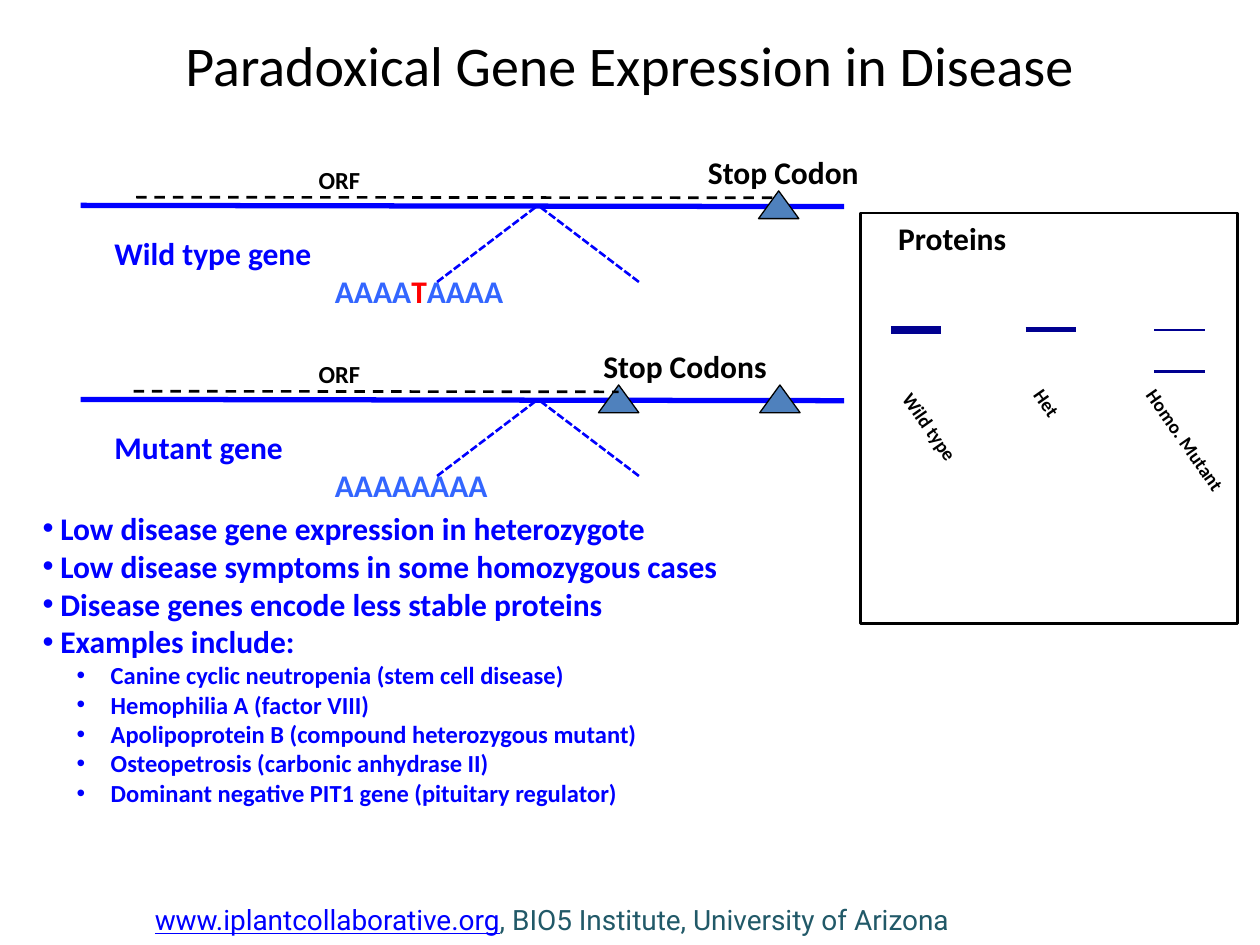
"""Build the slide on paradoxical gene expression on a grid of 100 columns by 75 rows."""
import dataclasses
import typing

import lxml.etree
import pptx
import pptx.dml.color
import pptx.enum.dml
import pptx.enum.shapes
import pptx.enum.text
import pptx.oxml.ns
import pptx.util

COLS, ROWS = 100, 75
BLUE, SKY, NAVY, RED, BLACK = "0000FF", "3366FF", "000090", "FF0000", "000000"
SHORT = pptx.enum.dml.MSO_LINE.SQUARE_DOT
LONG = pptx.enum.dml.MSO_LINE.DASH
MID = pptx.enum.text.MSO_ANCHOR.MIDDLE
SHAPES = pptx.enum.shapes.MSO_SHAPE

deck = pptx.Presentation()
deck.slide_width, deck.slide_height = pptx.util.Inches(10), pptx.util.Inches(7.5)
slide = deck.slides.add_slide(deck.slide_layouts[5])


@dataclasses.dataclass
class Gene:
    """A gene row: its line's row, name, bases, stop label and the columns of its stops."""
    row: float
    name: str
    bases: list[tuple[str, str]]
    label: str
    label_col: float
    stops: list[float]
    frame: tuple[float, float]


@dataclasses.dataclass
class Band:
    """A protein band on the gel."""
    col: float
    row: float
    width: float


@dataclasses.dataclass
class Lane:
    """A slanted lane name on the gel."""
    name: str
    col: float
    row: float
    span: float


GENES = [
    Gene(16.35, "Wild type gene", [("AAAA", SKY), ("T", RED), ("AAAA", SKY)],
         "Stop Codon", 55.2, [60.2], (10.8, 61.8)),
    Gene(31.75, "Mutant gene", [("AAAAAAAA", SKY)],
         "Stop Codons", 46.9, [60.3, 47.5], (10.6, 49.1)),
]
BANDS = [Band(70.7, 26.2, 4.5), Band(81.4, 26.15, 3), Band(91.6, 26.2, 1), Band(91.6, 29.5, 1.5)]
LANES = [Lane("Wild type", 69, 33.8, 11.5), Lane("Het", 79.4, 33.5, 11.5),
         Lane("Homo. Mutant", 88.1, 34, 12.6)]
POINTS = ["Low disease gene expression in heterozygote",
          "Low disease symptoms in some homozygous cases",
          "Disease genes encode less stable proteins",
          "Examples include:"]
CASES = ["Canine cyclic neutropenia (stem cell disease)",
         "Hemophilia A (factor VIII)",
         "Apolipoprotein B (compound heterozygous mutant)",
         "Osteopetrosis (carbonic anhydrase II)",
         "Dominant negative PIT1 gene (pituitary regulator)"]


def across(cols: float) -> int:
    """Turn columns into a length."""
    return round(deck.slide_width * cols / COLS)


def down(rows: float) -> int:
    """Turn rows into a length."""
    return round(deck.slide_height * rows / ROWS)


def tint(code: str) -> pptx.dml.color.RGBColor:
    """Turn a hex string into a colour."""
    return pptx.dml.color.RGBColor.from_string(code)


def write(para: typing.Any, text: str, size: float = 18, hue: str = BLACK,
          bold: bool = True, face: str = "Calibri", under: bool = False) -> None:
    """Add a run of text to a paragraph."""
    run = para.add_run()
    run.text = text
    font = run.font
    font.size, font.bold, font.name, font.underline = pptx.util.Pt(size), bold, face, under
    font.color.rgb = tint(hue)


def box(col: float, row: float, wide: float, high: float = 4, turn: float = 0) -> typing.Any:
    """Add a wrapped text box and return its frame."""
    shape = slide.shapes.add_textbox(across(col), down(row), across(wide), down(high))
    shape.rotation = turn
    shape.text_frame.word_wrap = True
    return shape.text_frame


def line(start: tuple[float, float], end: tuple[float, float], hue: str,
         width: float, dash: typing.Any = None) -> None:
    """Draw a straight line between two grid points."""
    link = slide.shapes.add_connector(
        pptx.enum.shapes.MSO_CONNECTOR.STRAIGHT,
        across(start[0]), down(start[1]), across(end[0]), down(end[1]))
    link.line.color.rgb = tint(hue)
    link.line.width = pptx.util.Pt(width)
    if dash is not None:
        link.line.dash_style = dash
    lxml.etree.SubElement(link._element.spPr, pptx.oxml.ns.qn("a:effectLst"))


def form(kind: typing.Any, col: float, row: float, wide: float, high: float,
         width: float, fill: str | None = None) -> None:
    """Draw a black-edged preset shape."""
    shape = slide.shapes.add_shape(kind, across(col), down(row), across(wide), down(high))
    shape.shadow.inherit = False
    shape.line.color.rgb = tint(BLACK)
    shape.line.width = pptx.util.Pt(width)
    if fill:
        shape.fill.solid()
        shape.fill.fore_color.rgb = tint(fill)
    else:
        shape.fill.background()


def bullet(para: typing.Any, left: float, hang: float) -> None:
    """Give a paragraph a hanging bullet."""
    props = para._p.get_or_add_pPr()
    props.set("marL", str(across(left)))
    props.set("indent", str(-across(hang)))
    font = lxml.etree.SubElement(props, pptx.oxml.ns.qn("a:buFont"))
    font.set("typeface", "Arial")
    mark = lxml.etree.SubElement(props, pptx.oxml.ns.qn("a:buChar"))
    mark.set("char", "•")


def draw_gene(gene: Gene) -> None:
    """Draw a gene with its frame, intron, bases and stops."""
    row = gene.row
    line((6.4, row - 0.05), (67, row + 0.05), BLUE, 3)
    write(box(8.1, row + 1.75, 22.1).paragraphs[0], gene.name, hue=BLUE)
    bases = box(25.6, row + 4.75, 34.5).paragraphs[0]
    for text, hue in gene.bases:
        write(bases, text, hue=hue)
    for top, foot in ((42.5, 34.6), (42.9, 50.8)):
        line((top, row + 0.1), (foot, row + 6.1), BLUE, 1.5, SHORT)
    write(box(gene.label_col, row - 4.7, 17.9).paragraphs[0], gene.label)
    for stop in gene.stops:
        form(SHAPES.ISOSCELES_TRIANGLE, stop, row - 1.2, 3.2, 2.2, 0.75, "4F81BD")
    left, right = gene.frame
    line((left, row - 0.7), (right, row - 0.65), BLACK, 1.5, LONG)
    write(box(24.3, row - 3.75, 19.9, 3.4).paragraphs[0], "ORF", size=14)


def draw_gel() -> None:
    """Draw the protein panel with its bands and lanes."""
    form(SHAPES.RECTANGLE, 68.3, 16.9, 29.9, 32.6, 1.5)
    write(box(70.3, 16.9, 25.1).paragraphs[0], "Proteins")
    for band in BANDS:
        line((band.col, band.row), (band.col + 4, band.row), NAVY, band.width)
    for lane in LANES:
        frame = box(lane.col, lane.row, lane.span, 2.9, turn=55)
        write(frame.paragraphs[0], lane.name, size=11)


def draw_list() -> None:
    """Write the findings and the example diseases."""
    frame = box(2.4, 39.9, 80.2, 24.9)
    items = [(text, 18, 1.4, 1.4) for text in POINTS] + [(text, 14, 5.4, 2.7) for text in CASES]
    for spot, (text, size, left, hang) in enumerate(items):
        para = frame.add_paragraph() if spot else frame.paragraphs[0]
        bullet(para, left, hang)
        write(para, text, size=size, hue=BLUE)


def main() -> None:
    """Build and save the slide."""
    foot = box(11.3, 71, 69.1)
    foot.vertical_anchor = MID
    write(foot.paragraphs[0], "www.iplantcollaborative.org", size=16, hue=BLUE,
          bold=False, face="Roboto", under=True)
    write(foot.paragraphs[0], ", BIO5 Institute, University of Arizona", size=16,
          hue="215968", bold=False, face="Roboto")
    title = slide.shapes.title
    title.left, title.top, title.width, title.height = 0, 0, across(100), down(10.1)
    title.text_frame.vertical_anchor = MID
    title.text_frame.paragraphs[0].alignment = pptx.enum.text.PP_ALIGN.CENTER
    write(title.text_frame.paragraphs[0], "Paradoxical Gene Expression in Disease",
          size=32, bold=False)
    for gene in GENES:
        draw_gene(gene)
    draw_gel()
    draw_list()
    deck.save("out.pptx")


if __name__ == "__main__":
    main()
